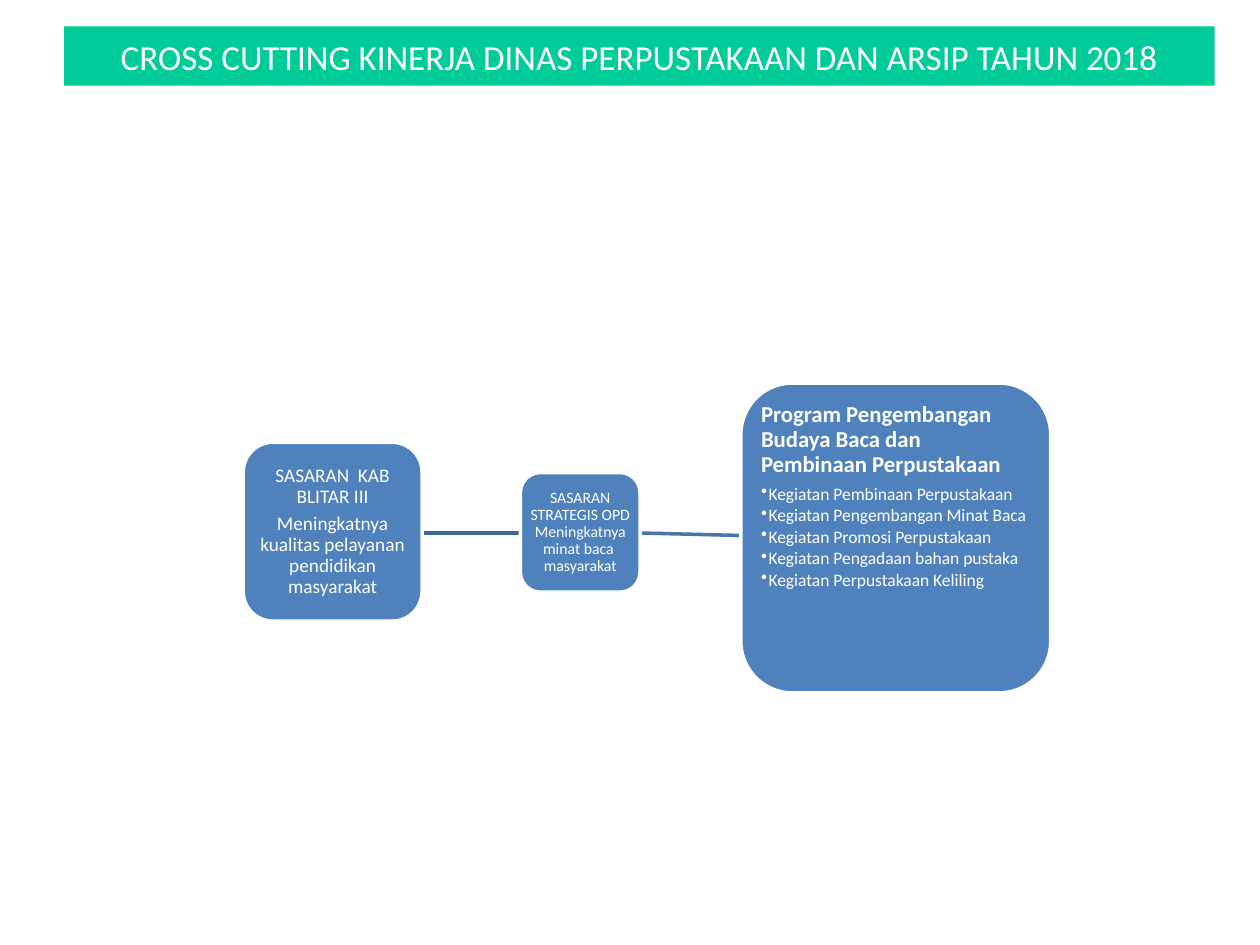
from dataclasses import dataclass

import pptx
from lxml import etree
from pptx.dml.color import RGBColor
from pptx.enum.shapes import MSO_CONNECTOR, MSO_SHAPE
from pptx.enum.text import MSO_ANCHOR, MSO_AUTO_SIZE, PP_ALIGN
from pptx.oxml.ns import qn
from pptx.util import Inches, Pt


@dataclass(frozen=True)
class Theme:
    font: str = "Calibri"
    white: str = "FFFFFF"
    banner: str = "00CC99"
    box: str = "4F81BD"
    first_link: str = "3F6797"
    second_link: str = "4875AC"
    title_size: int = 20
    program_size: int = 13
    goal_size: int = 11
    activity_size: int = 10
    strategy_size: int = 9
    line_width: int = 2


THEME = Theme()

GOAL = ["SASARAN  KAB BLITAR III",
        "Meningkatnya kualitas pelayanan pendidikan masyarakat"]
STRATEGY = "SASARAN STRATEGIS OPD Meningkatnya minat baca  masyarakat"
PROGRAM = "Program Pengembangan Budaya Baca dan Pembinaan Perpustakaan"
ACTIVITIES = [
    "Kegiatan Pembinaan Perpustakaan",
    "Kegiatan Pengembangan Minat Baca",
    "Kegiatan Promosi Perpustakaan",
    "Kegiatan Pengadaan bahan pustaka",
    "Kegiatan Perpustakaan Keliling",
]


def set_bullet(paragraph, indent):
    properties = paragraph._p.get_or_add_pPr()
    properties.set("marL", str(indent))
    properties.set("indent", str(-indent))
    etree.SubElement(properties, qn("a:buChar")).set("char", "•")


def add_text(frame, text, *, size, bold=False, align=PP_ALIGN.CENTER,
             line_spacing=0.9, after=0.35, bullet=False):
    """Fill the first empty paragraph or append one; after is a share of size."""
    paragraph = frame.paragraphs[-1]
    if paragraph.runs:
        paragraph = frame.add_paragraph()
    paragraph.alignment = align
    paragraph.line_spacing = line_spacing
    paragraph.space_before = Pt(0)
    paragraph.space_after = Pt(size * after)
    if bullet:
        paragraph.level = 1
        set_bullet(paragraph, Inches(0.06))
    run = paragraph.add_run()
    run.text = text
    run.font.name = THEME.font
    run.font.size = Pt(size)
    run.font.bold = bold
    run.font.color.rgb = RGBColor.from_string(THEME.white)


def set_title(slide, text):
    title = slide.shapes.title
    title.left, title.top = Inches(0.51), Inches(0.21)
    title.width, title.height = Inches(9.13), Inches(0.47)
    title.fill.solid()
    title.fill.fore_color.rgb = RGBColor.from_string(THEME.banner)
    frame = title.text_frame
    frame.auto_size = MSO_AUTO_SIZE.NONE
    frame.vertical_anchor = MSO_ANCHOR.MIDDLE
    add_text(frame, text, size=THEME.title_size, line_spacing=1.0, after=0)


def add_box(slide, left, top, side, *, inset=0.03, anchor=MSO_ANCHOR.MIDDLE):
    """Add a square rounded box and return its text frame."""
    shape = slide.shapes.add_shape(
        MSO_SHAPE.ROUNDED_RECTANGLE,
        Inches(left), Inches(top), Inches(side), Inches(side))
    shape.shadow.inherit = False
    shape.fill.solid()
    shape.fill.fore_color.rgb = RGBColor.from_string(THEME.box)
    shape.line.color.rgb = RGBColor.from_string(THEME.white)
    shape.line.width = Pt(THEME.line_width)
    frame = shape.text_frame
    frame.word_wrap = True
    frame.vertical_anchor = anchor
    frame.margin_left = frame.margin_right = Inches(inset)
    frame.margin_top = frame.margin_bottom = Inches(inset)
    return frame


def add_link(slide, start, end, color):
    connector = slide.shapes.add_connector(
        MSO_CONNECTOR.STRAIGHT, *map(Inches, start + end))
    connector.line.color.rgb = RGBColor.from_string(color)
    connector.line.width = Pt(THEME.line_width)
    etree.SubElement(connector._element.spPr, qn("a:effectLst"))


def main():
    presentation = pptx.Presentation()
    presentation.slide_width = Inches(10)
    presentation.slide_height = Inches(7.5)
    slide = presentation.slides.add_slide(presentation.slide_layouts[5])
    set_title(slide, "CROSS CUTTING KINERJA DINAS PERPUSTAKAAN DAN ARSIP TAHUN 2018")

    add_link(slide, (3.35, 4.23), (4.13, 4.23), THEME.first_link)
    add_link(slide, (5.08, 4.23), (5.88, 4.25), THEME.second_link)

    goal = add_box(slide, 1.93, 3.51, 1.42)
    for text in GOAL:
        add_text(goal, text, size=THEME.goal_size)

    strategy = add_box(slide, 4.13, 3.75, 0.95)
    add_text(strategy, STRATEGY, size=THEME.strategy_size)

    program = add_box(slide, 5.88, 3.04, 2.46, inset=0.04, anchor=MSO_ANCHOR.TOP)
    add_text(program, PROGRAM, size=THEME.program_size, bold=True,
             align=PP_ALIGN.LEFT)
    for text in ACTIVITIES:
        add_text(program, text, size=THEME.activity_size, after=0.15,
                 align=PP_ALIGN.LEFT, bullet=True)

    presentation.save("out.pptx")


if __name__ == "__main__":
    main()
